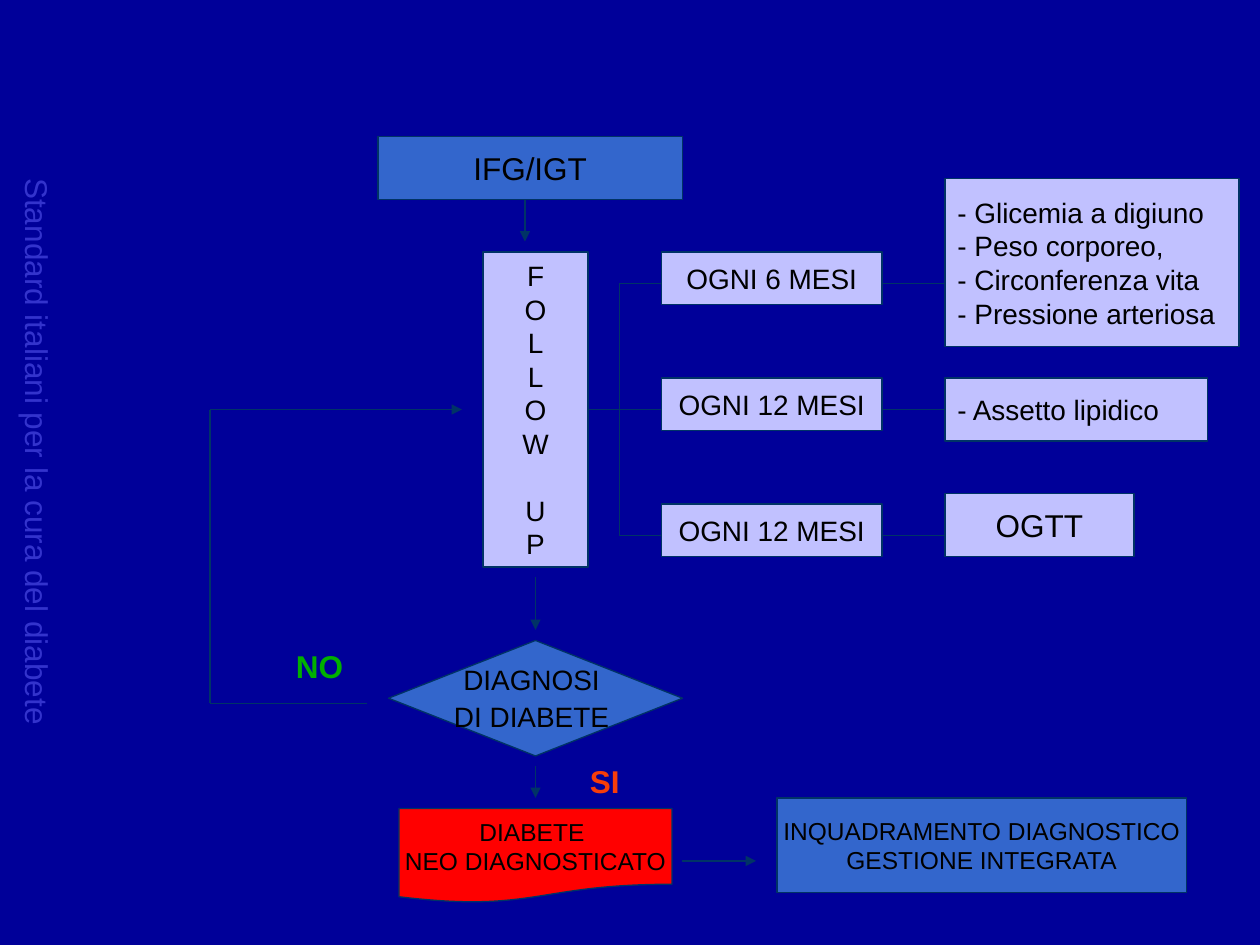
from dataclasses import dataclass
from lxml import etree
from pptx import Presentation
from pptx.dml.color import RGBColor
from pptx.enum.shapes import MSO_CONNECTOR, MSO_SHAPE
from pptx.enum.text import MSO_ANCHOR, PP_ALIGN
from pptx.oxml.ns import qn
from pptx.util import Inches, Pt

RECT, DIAMOND = MSO_SHAPE.RECTANGLE, MSO_SHAPE.DIAMOND
DOC = MSO_SHAPE.FLOWCHART_DOCUMENT
STRAIGHT = MSO_CONNECTOR.STRAIGHT
LEFT, CENTER = PP_ALIGN.LEFT, PP_ALIGN.CENTER
TOP, MIDDLE = MSO_ANCHOR.TOP, MSO_ANCHOR.MIDDLE
CELL = Inches(10) / 120
NAVY, BLUE, LILAC, RED = "000099", "3366CC", "C1C1FF", "FF0000"
INK, BLACK = "003366", "000000"


@dataclass
class Box:
    """A filled shape placed in grid columns and rows."""
    text: str
    col: float
    row: float
    wide: float
    high: float
    fill: str = LILAC
    size: int = 16
    kind: int = RECT
    align: int = CENTER
    gap: tuple = (0, 0)


@dataclass
class Label:
    """Free text placed in grid columns and rows."""
    text: str
    col: float
    row: float
    wide: float
    high: float
    color: str
    bold: bool = True
    turn: str = "horz"


@dataclass
class Link:
    """A straight line through grid points, with optional arrow and joins."""
    start: tuple
    end: tuple
    arrow: bool = False
    tail: str = ""
    head: str = ""


BOXES = {
    "start": Box("IFG/IGT", 36, 13, 29, 6, BLUE, 18),
    "follow": Box("F\nO\nL\nL\nO\nW\nU\nP", 46, 24, 10, 30, gap=(6, 19)),
    "check": Box("DIAGNOSI \nDI DIABETE ", 37, 61, 28, 11, BLUE,
                 kind=DIAMOND, gap=(1, 2)),
    "found": Box("DIABETE \nNEO DIAGNOSTICATO", 38, 77, 26, 9, RED, 14, DOC),
    "fats": Box("- Assetto lipidico", 90, 36, 25, 6, align=LEFT),
    "ogtt": Box("OGTT", 90, 47, 18, 6, size=18),
    "exam": Box("- Glicemia a digiuno\n- Peso corporeo,\n- Circonferenza vita\n"
                "- Pressione arteriosa", 90, 17, 28, 16, align=LEFT),
    "care": Box("INQUADRAMENTO DIAGNOSTICO\nGESTIONE INTEGRATA",
                74, 76, 39, 9, BLUE, 14),
}
TERMS = ("OGNI 6 MESI", "OGNI 12 MESI", "OGNI 12 MESI")
for rank, term in enumerate(TERMS):
    BOXES[f"term{rank}"] = Box(term, 63, 24 + 12 * rank, 21, 5)

LABELS = [
    Label("NO", 27, 61, 7, 4.8, "00B000"),
    Label("SI", 55, 72, 5.3, 4.8, "F63D0A"),
    Label("Standard italiani per la cura del diabete", 0, 15.8, 6, 53.2,
          "3333CC", False, "eaVert"),
]

LINKS = [
    Link((50, 19), (50, 23), True),
    Link((51, 55), (51, 60), True),
    Link((51, 73), (51, 76), True),
    Link((35, 67), (20, 67)),
    Link((20, 67), (20, 39)),
    Link((20, 39), (44, 39), True),
    Link((56, 39), (63, 39), tail="follow"),
    Link((59, 27), (59, 51)),
    Link((59, 27), (63, 27)),
    Link((59, 51), (63, 51)),
    Link((84, 27), (90, 27)),
    Link((84, 39), (90, 39), head="fats"),
    Link((84, 51), (90, 51)),
    Link((65, 82), (72, 82), True),
]


def grid(*cells: float) -> list:
    """Turn grid cells into lengths."""
    return [round(cell * CELL) for cell in cells]


def paint(fmt, color: str) -> None:
    """Give a fill a solid colour."""
    fmt.solid()
    fmt.fore_color.rgb = RGBColor.from_string(color)


def write(frame, text: str, align: int, anchor: int, color: str, **font) -> None:
    """Write each line of text as a paragraph."""
    frame.word_wrap = False
    frame.vertical_anchor = anchor
    for rank, words in enumerate(text.split("\n")):
        para = frame.add_paragraph() if rank else frame.paragraphs[0]
        para.alignment = align
        run = para.add_run()
        run.text = words
        for name, value in {"name": "Arial", **font}.items():
            setattr(run.font, name, value)
        paint(run.font.fill, color)


def rule(line) -> None:
    """Style an outline or a connector line."""
    paint(line.fill, INK)
    line.width = Pt(0.75)


def draw_box(slide, box: Box):
    """Draw a box and return its shape."""
    place = grid(box.col, box.row, box.wide, box.high)
    shape = slide.shapes.add_shape(box.kind, *place)
    shape.shadow.inherit = False
    paint(shape.fill, box.fill)
    rule(shape.line)
    write(shape.text_frame, box.text, box.align, MIDDLE, BLACK, size=Pt(box.size))
    rank, space = box.gap
    if space:
        shape.text_frame.paragraphs[rank].space_before = Pt(space)
    return shape


def draw_label(slide, label: Label) -> None:
    """Draw free text, turned when asked."""
    place = grid(label.col, label.row, label.wide, label.high)
    shape = slide.shapes.add_textbox(*place)
    write(shape.text_frame, label.text, LEFT, TOP, label.color,
          size=Pt(18), bold=label.bold)
    shape.element.txBody.find(qn("a:bodyPr")).set("vert", label.turn)


def draw_link(slide, link: Link, shapes: dict) -> None:
    """Draw a line and join it to the boxes it names."""
    wire = slide.shapes.add_connector(STRAIGHT, *grid(*link.start, *link.end))
    rule(wire.line)
    if link.tail:
        wire.begin_connect(shapes[link.tail], 3)
    if link.head:
        wire.end_connect(shapes[link.head], 1)
    props = wire.element.spPr
    if link.arrow:
        etree.SubElement(props.find(qn("a:ln")), qn("a:tailEnd"), type="triangle")
    etree.SubElement(props, qn("a:effectLst"))


def main() -> None:
    """Build and save the slide."""
    deck = Presentation()
    deck.slide_width, deck.slide_height = grid(120, 90)
    slide = deck.slides.add_slide(deck.slide_layouts[6])
    paint(slide.background.fill, NAVY)
    shapes = {name: draw_box(slide, box) for name, box in BOXES.items()}
    for link in LINKS:
        draw_link(slide, link, shapes)
    for label in LABELS:
        draw_label(slide, label)
    deck.save("out.pptx")


if __name__ == "__main__":
    main()
